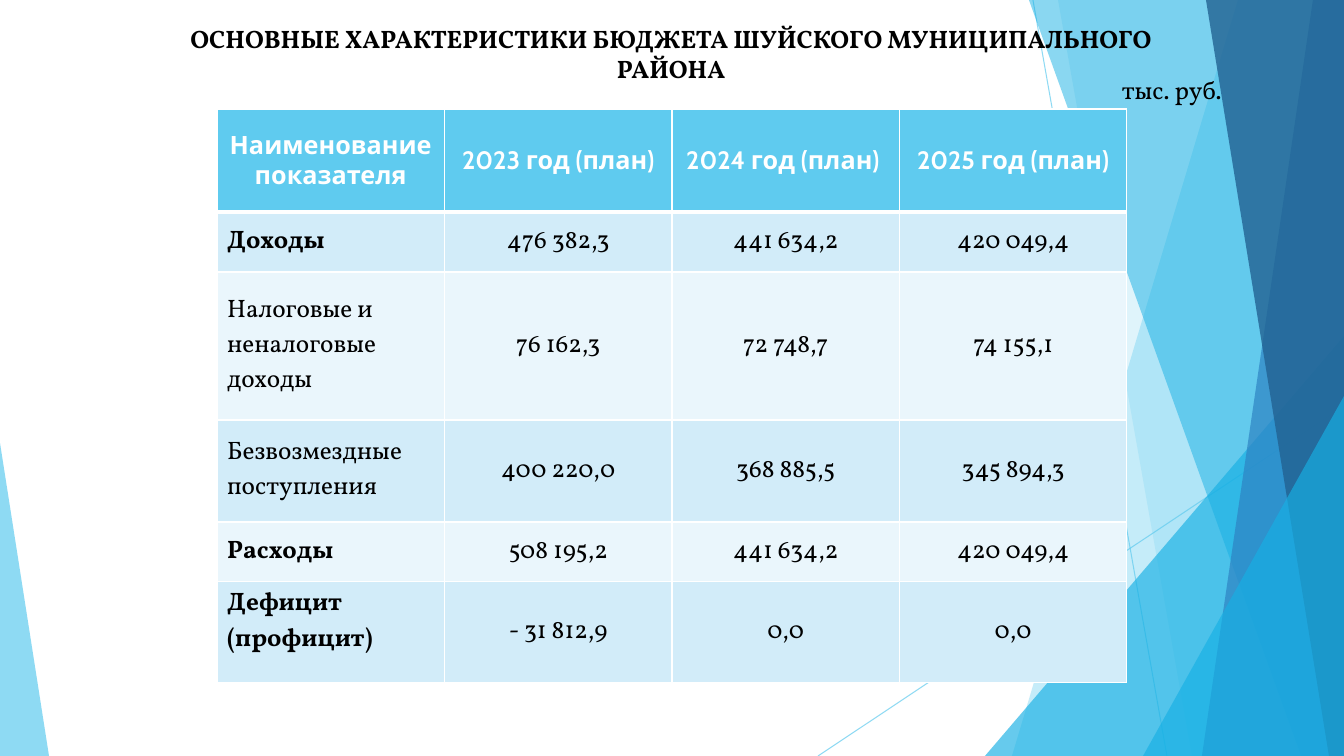
from lxml import etree
from pptx import Presentation
from pptx.dml.color import RGBColor as RGB
from pptx.enum.shapes import MSO_CONNECTOR as CONN, MSO_SHAPE as SHAPE
from pptx.enum.text import MSO_ANCHOR as ANCHOR, PP_ALIGN as ALIGN
from pptx.oxml.ns import qn
from pptx.util import Pt

# Content
TITLE = "ОСНОВНЫЕ ХАРАКТЕРИСТИКИ БЮДЖЕТА ШУЙСКОГО МУНИЦИПАЛЬНОГО РАЙОНА"
UNITS = "тыс. руб."
ROWS = [
    ("Наименование показателя", "2023 год (план)", "2024 год (план) ", "2025 год (план)"),
    ("Доходы", "476 382,3", "441 634,2", "420 049,4"),
    ("Налоговые и неналоговые доходы", "76 162,3", "72 748,7", "74 155,1"),
    ("Безвозмездные поступления", "400 220,0", "368 885,5", "345 894,3"),
    ("Расходы", "508 195,2", "441 634,2", "420 049,4"),
    ("Дефицит (профицит)", "- 31 812,9", "0,0", "0,0"),
]
BOLD_LABELS = {"Доходы", "Расходы", "Дефицит (профицит)"}
ROW_HEIGHTS = [103, 60, 148, 102, 60, 101]

# Style
C = {"sky": "5FCBEF", "cyan": "17B0E4", "blue": "2E83C3", "navy": "226292",
     "odd": "D2ECF9", "even": "EAF6FC", "white": "FFFFFF", "black": "000000"}
SCALE = 914400 / 100.8
W, H = 1344, 756

# Background facets, back to front: points or (left, top, width, height, apex), colour, opacity %
LINES = [(1033, 0, 1167, H), (W, 406, 818, H)]
FACETS = [
    ("poly", [(1238, 0), (W, 0), (W, H), (1012, H)], "sky", 36),
    ("poly", [(1058, 0), (W, 0), (W, H), (1192, H)], "sky", 20),
    ("tri", (985, 336, 359, 420, 1), "cyan", 66),
    ("poly", [(1029, 0), (W, 0), (W, H), (1301, H)], "cyan", 50),
    ("poly", [(1313, 0), (W, 0), (W, H), (1202, H)], "blue", 70),
    ("poly", [(1206, 0), (W, 0), (W, H), (1329, H)], "navy", 80),
    ("tri", (1143, 396, 201, 360, 1), "cyan", 66),
    ("tri", (0, 443, 49, 313, 0), "sky", 70),
]


def px(n):
    return round(n * SCALE)


def set_alpha(props, percent):
    color = next(props.iter(qn("a:srgbClr")))
    etree.SubElement(color, qn("a:alpha")).set("val", str(percent * 1000))


def add_line(s, *ends):
    cn = s.shapes.add_connector(CONN.STRAIGHT, *map(px, ends))
    cn.line.color.rgb = RGB.from_string(C["sky"])
    cn.line.width = Pt(0.75)
    props = cn.line._get_or_add_ln()
    set_alpha(props, 70)
    etree.SubElement(props.getparent(), qn("a:effectLst"))


def add_facet(s, kind, geometry, color, opacity):
    if kind == "poly":
        fb = s.shapes.build_freeform(*geometry[0], scale=SCALE)
        fb.add_line_segments(geometry[1:], close=True)
        sp = fb.convert_to_shape()
    else:
        *box, apex = geometry
        sp = s.shapes.add_shape(SHAPE.ISOSCELES_TRIANGLE, *map(px, box))
        sp.adjustments[0] = apex
    sp.shadow.inherit = False
    sp.line.fill.background()
    sp.fill.solid()
    sp.fill.fore_color.rgb = RGB.from_string(C[color])
    set_alpha(sp.fill._xPr, opacity)


def write(tf, text, align, font="Vollkorn", color="black", bold=False):
    p = tf.paragraphs[0]
    p.alignment = align
    r = p.add_run()
    r.text = text
    r.font.name, r.font.size, r.font.bold = font, Pt(18), bold
    r.font.color.rgb = RGB.from_string(C[color])


def add_text(s, box, text, align, bold=False):
    tf = s.shapes.add_textbox(*map(px, box)).text_frame
    tf.word_wrap = True
    write(tf, text, align, bold=bold)


def set_borders(cell, bottom):
    props = cell._tc.get_or_add_tcPr()
    for i, (side, width) in enumerate([("L", 1), ("R", 1), ("T", 1), ("B", bottom)]):
        ln = etree.Element(qn(f"a:ln{side}"), w=str(Pt(width)))
        fill = etree.SubElement(ln, qn("a:solidFill"))
        etree.SubElement(fill, qn("a:srgbClr"), val=C["white"])
        props.insert(i, ln)


def add_budget_table(s):
    box = map(px, (217, 109, 910, sum(ROW_HEIGHTS)))
    table = s.shapes.add_table(len(ROWS), len(ROWS[0]), *box).table
    for i, row in enumerate(ROWS):
        table.rows[i].height = px(ROW_HEIGHTS[i])
        header = i == 0
        for j, text in enumerate(row):
            cell = table.cell(i, j)
            last_label = i == len(ROWS) - 1 and j == 0
            cell.vertical_anchor = ANCHOR.TOP if last_label else ANCHOR.MIDDLE
            cell.fill.solid()
            fill = "sky" if header else "odd" if i % 2 else "even"
            cell.fill.fore_color.rgb = RGB.from_string(C[fill])
            set_borders(cell, 3 if header else 1)
            if header:
                write(cell.text_frame, text, ALIGN.CENTER, "Cabin", "white", True)
            else:
                align = ALIGN.CENTER if j else ALIGN.LEFT
                write(cell.text_frame, text, align, bold=text in BOLD_LABELS)


def main():
    prs = Presentation()
    prs.slide_width, prs.slide_height = px(W), px(H)
    s = prs.slides.add_slide(prs.slide_layouts[6])

    # Background
    for ends in LINES:
        add_line(s, *ends)
    for facet in FACETS:
        add_facet(s, *facet)

    # Table and captions
    add_budget_table(s)
    add_text(s, (145, 18, 1052, 72), TITLE, ALIGN.CENTER, bold=True)
    add_text(s, (1112, 69, 156, 40), UNITS, ALIGN.LEFT)
    prs.save("out.pptx")


if __name__ == "__main__":
    main()
